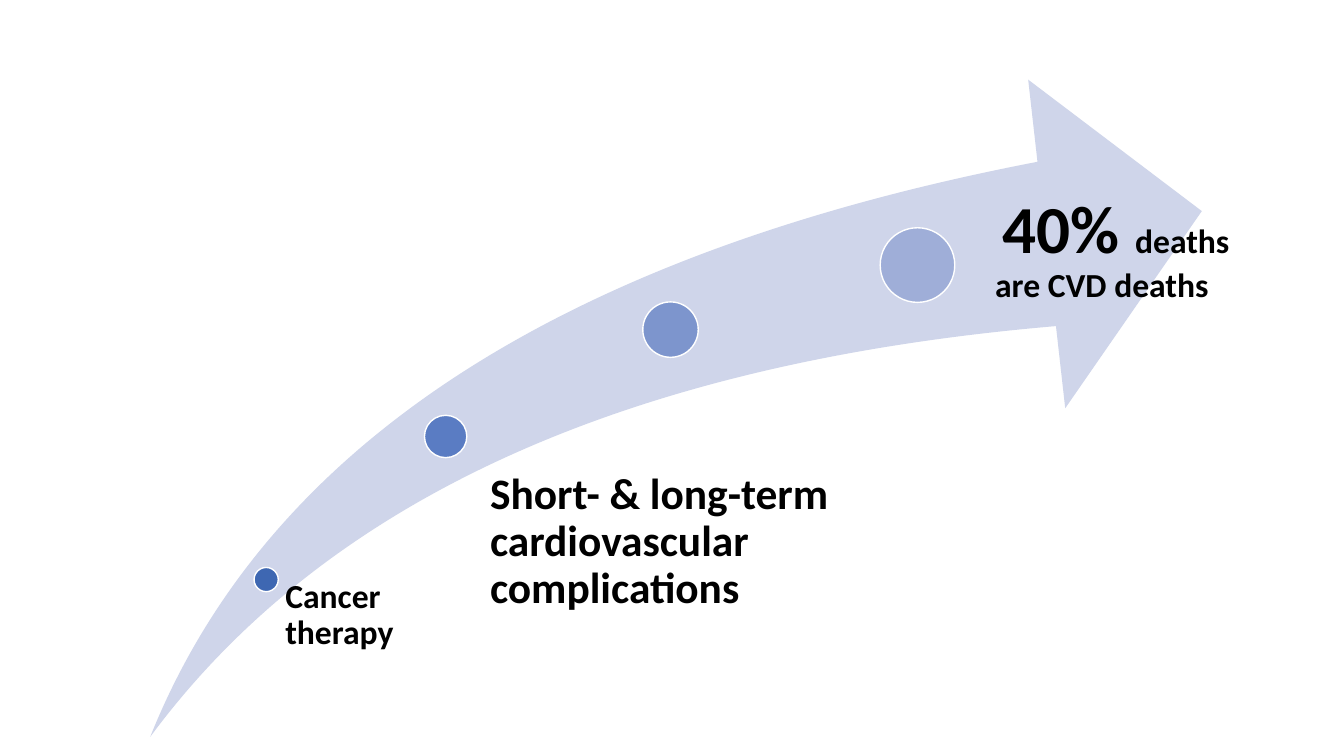
"""Build the slide on cardiovascular deaths along the cancer therapy path."""
import pptx
import pptx.dml.color
import pptx.enum.shapes
import pptx.enum.text
import pptx.util

Inches = pptx.util.Inches
Pt = pptx.util.Pt
SHAPES = pptx.enum.shapes.MSO_SHAPE

COLOURS = {"arrow": "CFD5EA", "outline": "FFFFFF", "text": "000000"}
ARROW_BOX = (1.49, 0.79, 10.43, 6.52)
MILESTONES = [
    (2.64, 5.75, 0.24, "3E67B2"),
    (4.42, 4.33, 0.42, "5A7CC3"),
    (6.65, 3.27, 0.55, "7D95CD"),
    (9.10, 2.63, 0.74, "9FAED8"),
]
LABELS = [
    ((2.70, 5.75, 1.78, 1.55), 0.13, [("Cancer therapy", 24)]),
    ((4.64, 4.68, 4.05, 1.42), 0.22,
     [("Short- & long-term cardiovascular complications", 31)]),
    ((9.48, 1.94, 3.18, 1.81), 0.39,
     [(" ", 24), ("40% ", 48), ("deaths\vare CVD deaths", 24)]),
]


def rgb(value):
    """Return a colour object for a hex string."""
    return pptx.dml.color.RGBColor.from_string(value)


def add_filled_shape(slide, kind, box, fill):
    """Add a shadowless preset shape with a solid fill."""
    shape = slide.shapes.add_shape(kind, *map(Inches, box))
    shape.shadow.inherit = False
    shape.fill.solid()
    shape.fill.fore_color.rgb = rgb(fill)
    return shape


def add_arrow(slide):
    """Add the rising arrow."""
    arrow = add_filled_shape(slide, SHAPES.SWOOSH_ARROW, ARROW_BOX, COLOURS["arrow"])
    arrow.adjustments[0] = 0.25
    arrow.adjustments[1] = 0.25
    arrow.line.fill.background()


def add_milestone(slide, centre_x, centre_y, diameter, fill):
    """Add a dot around its centre."""
    box = (centre_x - diameter / 2, centre_y - diameter / 2, diameter, diameter)
    dot = add_filled_shape(slide, SHAPES.OVAL, box, fill)
    dot.line.color.rgb = rgb(COLOURS["outline"])
    dot.line.width = Pt(1)


def add_label(slide, box, indent, pieces):
    """Add a bold label made of pieces of text with their sizes."""
    frame = slide.shapes.add_textbox(*map(Inches, box)).text_frame
    frame.word_wrap = True
    frame.vertical_anchor = pptx.enum.text.MSO_ANCHOR.TOP
    frame.margin_left = Inches(indent)
    frame.margin_top = frame.margin_right = frame.margin_bottom = 0
    paragraph = frame.paragraphs[0]
    paragraph.line_spacing = 0.9
    paragraph.font.name = "Calibri"
    paragraph.font.bold = True
    paragraph.font.color.rgb = rgb(COLOURS["text"])
    for text, size in pieces:
        for index, line in enumerate(text.split("\v")):
            if index:
                paragraph.add_line_break()
            run = paragraph.add_run()
            run.text = line
            run.font.size = Pt(size)


def main():
    """Build and save the presentation."""
    presentation = pptx.Presentation()
    presentation.slide_width = Inches(13.33)
    presentation.slide_height = Inches(7.5)
    slide = presentation.slides.add_slide(presentation.slide_layouts[6])
    add_arrow(slide)
    for milestone in MILESTONES:
        add_milestone(slide, *milestone)
    for label in LABELS:
        add_label(slide, *label)
    presentation.save("out.pptx")


if __name__ == "__main__":
    main()
